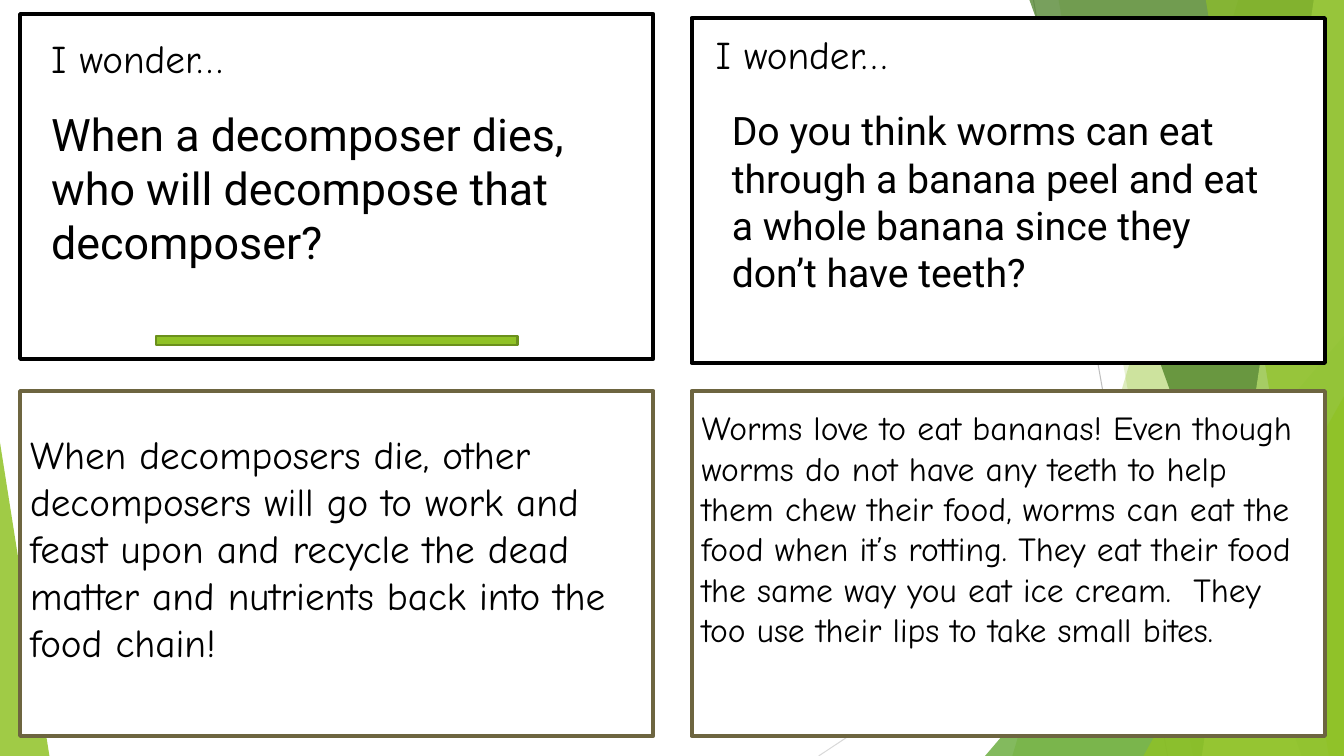
from dataclasses import dataclass
from lxml import etree
from pptx import Presentation
from pptx.dml.color import RGBColor
from pptx.enum.shapes import MSO_CONNECTOR, MSO_SHAPE
from pptx.oxml.ns import qn
from pptx.util import Inches, Pt


@dataclass(frozen=True)
class Theme:
    black: str = "000000"
    white: str = "FFFFFF"
    brown: str = "6D6540"
    lime: str = "90C226"
    leaf: str = "54A021"
    pine: str = "3F7819"
    pale: str = "C0E474"
    edge: str = "6B901C"
    gray: str = "BFBFBF"
    mist: str = "D9D9D9"
    hand: str = "Comic Neue"
    sans: str = "Roboto"
    large: int = 32
    mid: int = 28
    small: int = 24


@dataclass(frozen=True)
class Box:
    left: float
    top: float
    width: float
    height: float

    def inner(self, left, top, width, height):
        return Box(self.left + left, self.top + top, width, height)

    def place(self):
        return [Inches(n) for n in (self.left, self.top, self.width, self.height)]


THEME = Theme()


def paint(shape, color, alpha=100, line=None, weight=0):
    shape.shadow.inherit = False
    shape.fill.solid()
    shape.fill.fore_color.rgb = RGBColor.from_string(color)
    if alpha < 100:
        tint = shape.fill._xPr.find(qn("a:solidFill"))[0]
        etree.SubElement(tint, qn("a:alpha"), val=str(alpha * 1000))
    if line:
        shape.line.color.rgb = RGBColor.from_string(line)
        shape.line.width = Pt(weight)
    else:
        shape.line.fill.background()


def add_ray(slide, box, start, end, color):
    points = [Inches(n) for x, y in (start, end) for n in (box.left + x, box.top + y)]
    ray = slide.shapes.add_connector(MSO_CONNECTOR.STRAIGHT, *points)
    ray.line.color.rgb = RGBColor.from_string(color)
    ray.line.width = Pt(0.75)
    etree.SubElement(ray._element.spPr, qn("a:effectLst"))


def add_band(slide, box, top, foot, color, alpha):
    right, base = box.left + box.width, box.top + box.height
    points = [(box.left + top, box.top), (right, box.top), (right, base), (box.left + foot, base)]
    points = [(Inches(x), Inches(y)) for x, y in points]
    path = slide.shapes.build_freeform(*points[0])
    path.add_line_segments(points[1:], close=True)
    paint(path.convert_to_shape(), color, alpha)


def add_wedge(slide, box, tip, color, alpha):
    wedge = slide.shapes.add_shape(MSO_SHAPE.ISOSCELES_TRIANGLE, *box.place())
    wedge.adjustments[0] = tip
    paint(wedge, color, alpha)


def add_scene(slide, box):
    add_ray(slide, box, (10.25, 0), (11.58, 7.5), THEME.gray)
    add_ray(slide, box, (13.33, 4.03), (8.12, 7.5), THEME.mist)
    add_band(slide, box, 12.28, 10.04, THEME.lime, 30)
    add_band(slide, box, 10.5, 11.83, THEME.lime, 20)
    add_wedge(slide, box.inner(9.77, 3.33, 3.56, 4.17), 1, THEME.leaf, 72)
    add_band(slide, box, 10.21, 12.91, THEME.pine, 70)
    add_band(slide, box, 13.03, 11.92, THEME.pale, 70)
    add_band(slide, box, 11.96, 13.18, THEME.lime, 65)
    add_wedge(slide, box.inner(11.34, 3.93, 1.99, 3.57), 1, THEME.lime, 80)
    add_wedge(slide, box.inner(0, 4.39, 0.49, 3.11), 0, THEME.lime, 85)


def add_frame(slide, box, color):
    frame = slide.shapes.add_shape(MSO_SHAPE.RECTANGLE, *box.place())
    paint(frame, THEME.white, line=color, weight=3)


def add_text(slide, box, text, font, size):
    frame = slide.shapes.add_textbox(*box.place()).text_frame
    frame.word_wrap = True
    line = frame.paragraphs[0]
    line.text = text
    line.font.name = font
    line.font.size = Pt(size)
    line.font.color.rgb = RGBColor.from_string(THEME.black)


def add_query(slide, box, head, body, text, size):
    add_frame(slide, box, THEME.black)
    add_text(slide, box.inner(*head, 4.52, 0.57), "I wonder…", THEME.hand, THEME.mid)
    add_text(slide, box.inner(*body), text, THEME.sans, size)


def add_reply(slide, box, body, text, size):
    add_frame(slide, box, THEME.brown)
    add_text(slide, box.inner(*body), text, THEME.hand, size)


def add_minus(slide, box):
    minus = slide.shapes.add_shape(MSO_SHAPE.MATH_MINUS, *box.place())
    paint(minus, THEME.lime, line=THEME.edge, weight=1.5)


def main():
    deck = Presentation()
    deck.slide_width, deck.slide_height = Inches(13.33), Inches(7.5)
    slide = deck.slides.add_slide(deck.slide_layouts[6])
    add_scene(slide, Box(0, 0, 13.33, 7.5))

    left, right, low = 0.2, 6.86, 3.88
    size = 6.28, 3.42
    first = Box(left, 0.14, *size)
    add_query(
        slide, first, (0.21, 0.15), (0.21, 0.87, 5.94, 1.72),
        "When a decomposer dies, who will decompose that decomposer?", THEME.large,
    )
    add_minus(slide, first.inner(0.7, 3.06, 4.88, 0.36))
    add_query(
        slide, Box(right, 0.18, *size), (0.14, 0.07), (0.3, 0.83, 5.67, 1.99),
        "Do you think worms can eat through a banana peel and eat a whole banana "
        "since they don’t have teeth?", THEME.mid,
    )
    add_reply(
        slide, Box(left, low, *size), (0, 0.34, 6.28, 2.46),
        "When decomposers die, other decomposers will go to work and feast upon "
        "and recycle the dead matter and nutrients back into the food chain!", THEME.mid,
    )
    add_reply(
        slide, Box(right, low, *size), (0, 0.11, 6.13, 2.93),
        "Worms love to eat bananas! Even though worms do not have any teeth to help "
        "them chew their food, worms can eat the food when it’s rotting. They eat "
        "their food the same way you eat ice cream.  They too use their lips to take "
        "small bites.", THEME.small,
    )
    deck.save("out.pptx")


if __name__ == "__main__":
    main()
